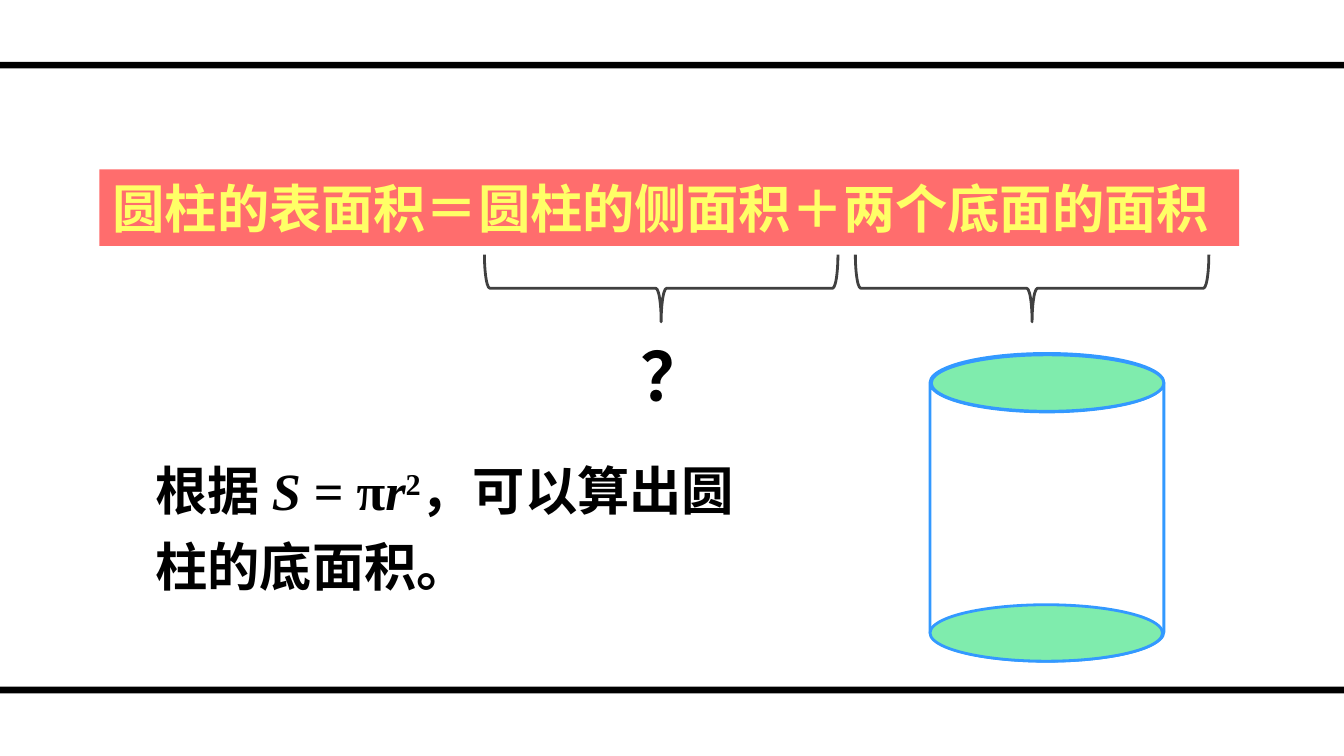
from pptx import Presentation
from pptx.dml.color import RGBColor
from pptx.enum import shapes, text
from pptx.util import Inches, Pt

WIDE = 10
HIGH = WIDE * 9 / 16
FONT = "Times New Roman"
BLUE, GREEN = "3399FF", "7FECAD"
KIND = shapes.MSO_SHAPE

# Each run: wording, format values that differ from plain bold
TITLE = [("圆柱的表面积＝圆柱的侧面积＋两个底面的面积", {})]
QUERY = [("？", {})]
RULE = [
    ("根据 ", {}),
    ("S ", {"italic": True}),
    ("= π", {}),
    ("r", {"italic": True}),
    ("2", {"raised": True}),
    ("，可以算出圆柱的底面积。", {}),
]

BARS = [0.46, 5.11]              # tops of the two page rules
BRACES = [4.67, 7.43]            # lefts before the quarter turn
CAN = (6.92, 2.63, 1.74, 2.29)
LID = 0.42                       # height of each end of the cylinder


def tint(code):
    return RGBColor.from_string(code)


def draw(kind, box, fill=None, line=None):
    shape = slide.shapes.add_shape(kind, *map(Inches, box))
    shape.shadow.inherit = False
    if fill:
        shape.fill.solid()
        shape.fill.fore_color.rgb = tint(fill)
    else:
        shape.fill.background()
    if line:
        shape.line.color.rgb = tint(line)
        shape.line.width = Pt(1.5)
    else:
        shape.line.fill.background()
    return shape


def write(shape, runs, size, color="000000", lead=1.0):
    frame = shape.text_frame
    frame.word_wrap = True
    frame.auto_size = text.MSO_AUTO_SIZE.SHAPE_TO_FIT_TEXT
    para = frame.paragraphs[0]
    para.alignment = text.PP_ALIGN.LEFT
    para.line_spacing = lead
    for words, extra in runs:
        run = para.add_run()
        run.text = words
        look = {"name": FONT, "size": Pt(size), "bold": True,
                "italic": extra.get("italic", False)}
        for key, value in look.items():
            setattr(run.font, key, value)
        run.font.color.rgb = tint(color)
        if extra.get("raised"):
            run.font._element.set("baseline", "30000")


def label(box, runs, size):
    write(slide.shapes.add_textbox(*map(Inches, box)), runs, size, lead=1.2)


deck = Presentation()
deck.slide_width, deck.slide_height = Inches(WIDE), Inches(HIGH)
slide = deck.slides.add_slide(deck.slide_layouts[6])

for top in BARS:
    draw(KIND.RECTANGLE, (0, top, WIDE, 0.05), "000000")

banner = draw(KIND.RECTANGLE, (0.74, 1.26, 8.48, 0.57), "FF6D6D")
write(banner, TITLE, 28, "FFFF66")

draw(KIND.CAN, CAN, "FFFFFF", BLUE)
left, top, width, height = CAN
for side, end in ((left + 0.01, top + 0.01), (left, top + height - LID)):
    draw(KIND.OVAL, (side, end, width - 0.01, LID), GREEN, BLUE)

label((1.06, 3.27, 4.53, 1.23), RULE, 28)

for left in reversed(BRACES):
    brace = draw(KIND.LEFT_BRACE, (left, 0.83, 0.5, 2.63), line="404040")
    brace.rotation = 270
    brace.adjustments[0] = 0.08
    brace.adjustments[1] = 0.5

label((4.67, 2.32, 0.62, 0.76), QUERY, 36)

deck.save("out.pptx")
